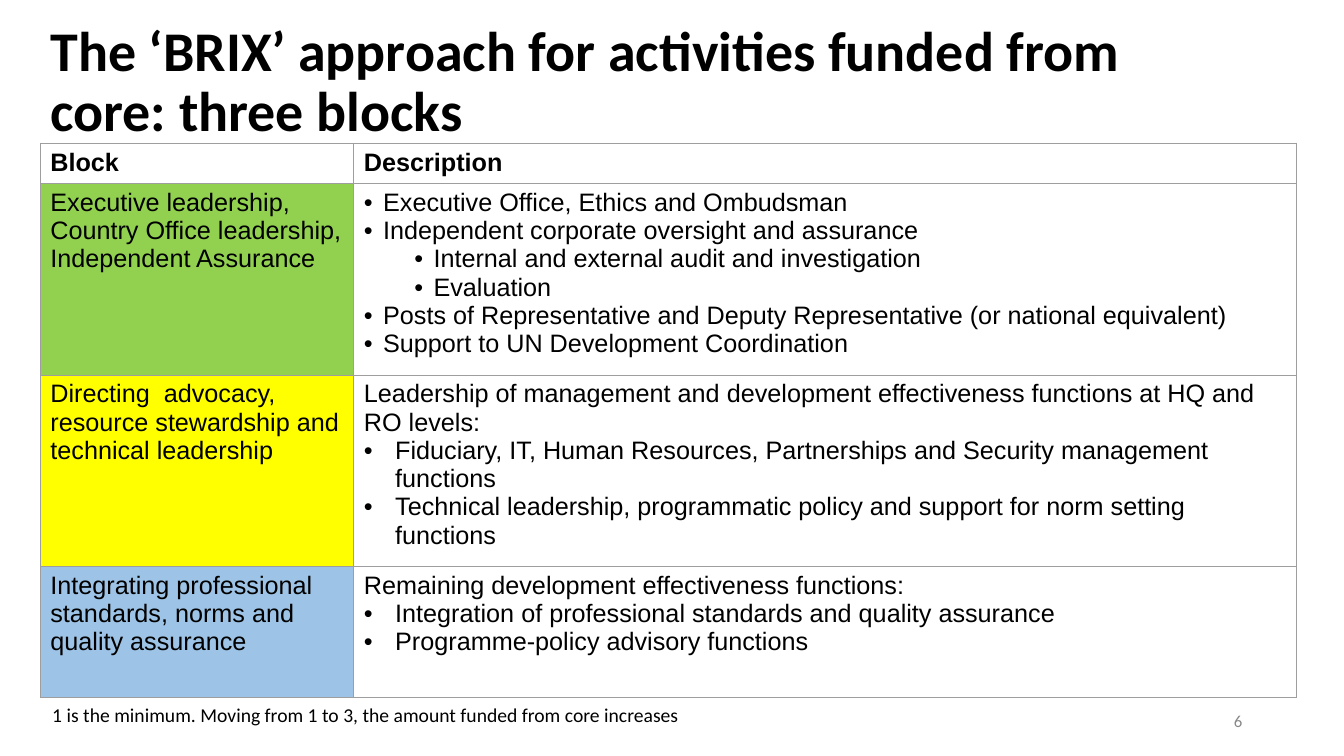
from dataclasses import dataclass

from lxml import etree
from pptx import Presentation
from pptx.dml.color import RGBColor
from pptx.enum.text import MSO_ANCHOR, MSO_AUTO_SIZE, PP_ALIGN
from pptx.oxml.ns import qn
from pptx.util import Inches, Pt

LEFT, RIGHT = PP_ALIGN.LEFT, PP_ALIGN.RIGHT
TOP, MIDDLE = MSO_ANCHOR.TOP, MSO_ANCHOR.MIDDLE
FIXED = MSO_AUTO_SIZE.NONE
TITLE_ONLY = 5


@dataclass(frozen=True)
class Theme:
    head: str = "Calibri"
    body: str = "Arial"
    ink: str = "000000"
    gray: str = "888888"
    rule: str = "9E9E9E"
    green: str = "92D050"
    yellow: str = "FFFF00"
    blue: str = "9DC3E6"
    title: int = 40
    cell: int = 18
    note: int = 14
    page: int = 12
    line: float = 0.75


THEME = Theme()
STEP = 0.5  # extra indent of each list level
TIGHT, WIDE = 0.19, 0.31  # hanging indents of bullets

COLS = (3.11, 9.35)
HEIGHTS = (0.4, 1.9, 1.9, 1.3)
# A paragraph is plain text or (text, hanging indent, level)
ROWS = (
    (None, ["Block"], ["Description"]),
    (THEME.green,
     ["Executive leadership,", "Country Office leadership,",
      "Independent Assurance"],
     [("Executive Office, Ethics and Ombudsman", TIGHT, 0),
      ("Independent corporate oversight and assurance", TIGHT, 0),
      ("Internal and external audit and investigation", TIGHT, 1),
      ("Evaluation", TIGHT, 1),
      ("Posts of Representative and Deputy Representative "
       "(or national equivalent)", TIGHT, 0),
      ("Support to UN Development Coordination", TIGHT, 0)]),
    (THEME.yellow,
     ["Directing  advocacy, resource stewardship and technical leadership"],
     ["Leadership of management and development effectiveness functions "
      "at HQ and RO levels:",
      ("Fiduciary, IT, Human Resources, Partnerships and Security "
       "management functions", WIDE, 0),
      ("Technical leadership, programmatic policy and support for norm "
       "setting functions", WIDE, 0)]),
    (THEME.blue,
     ["Integrating professional standards, norms and quality assurance"],
     ["Remaining development effectiveness functions:",
      ("Integration of professional standards and quality assurance",
       WIDE, 0),
      ("Programme-policy advisory functions", WIDE, 0)]),
)


def assign(item, values):
    for name, value in values.items():
        setattr(item, name, value)


class Deck:
    def __init__(self, theme):
        self.theme = theme
        self.file = Presentation()
        assign(self.file, {"slide_width": Inches(13.33),
                           "slide_height": Inches(7.5)})
        self.slide = self.file.slides.add_slide(
            self.file.slide_layouts[TITLE_ONLY])

    def style(self, para, text, size, font, color=None, bold=False, **form):
        """Add one formatted run to a paragraph."""
        run = para.add_run()
        run.text = text
        assign(run.font, {"size": Pt(size), "name": font, "bold": bold})
        run.font.color.rgb = RGBColor.from_string(color or self.theme.ink)
        assign(para, form)

    def title(self, text, box):
        shape = self.slide.shapes.title
        assign(shape, dict(zip(("left", "top", "width", "height"),
                               map(Inches, box))))
        frame = shape.text_frame
        assign(frame, {"word_wrap": True, "auto_size": FIXED,
                       "vertical_anchor": MIDDLE})
        assign(frame, {f"margin_{side}": Inches(0.1)
                       for side in ("left", "right", "top", "bottom")})
        self.style(frame.paragraphs[0], text, self.theme.title,
                   self.theme.head, bold=True, alignment=LEFT,
                   line_spacing=0.9)

    def text(self, text, box, size, color, anchor=TOP, wrap=True, **form):
        frame = self.slide.shapes.add_textbox(*map(Inches, box)).text_frame
        assign(frame, {"word_wrap": wrap, "vertical_anchor": anchor})
        self.style(frame.paragraphs[0], text, size, self.theme.head, color,
                   **form)

    def table(self, rows, cols, heights, left, top):
        grid = self.slide.shapes.add_table(
            len(rows), len(cols), Inches(left), Inches(top),
            Inches(sum(cols)), Inches(sum(heights))).table
        assign(grid, {"first_row": False, "horz_banding": False})
        for col, width in zip(grid.columns, cols):
            col.width = Inches(width)
        for r, (color, *texts) in enumerate(rows):
            grid.rows[r].height = Inches(heights[r])
            for c, paras in enumerate(texts):
                self.cell(grid.cell(r, c), paras, color if c == 0 else None,
                          bold=r == 0)

    def cell(self, cell, paras, color, bold):
        if color:
            cell.fill.solid()
            cell.fill.fore_color.rgb = RGBColor.from_string(color)
        else:
            cell.fill.background()
        self.border(cell)
        frame = cell.text_frame
        for i, item in enumerate(paras):
            para = frame.add_paragraph() if i else frame.paragraphs[0]
            text, hang, level = (item, 0, 0) if isinstance(item, str) else item
            self.style(para, text, self.theme.cell, self.theme.body,
                       bold=bold, level=level)
            if hang:
                self.bullet(para, hang, level)

    def border(self, cell):
        props = cell._tc.get_or_add_tcPr()
        for i, side in enumerate("LRTB"):
            line = etree.Element(qn(f"a:ln{side}"),
                                 w=str(Pt(self.theme.line)))
            fill = etree.SubElement(line, qn("a:solidFill"))
            etree.SubElement(fill, qn("a:srgbClr"), val=self.theme.rule)
            props.insert(i, line)

    def bullet(self, para, hang, level):
        props = para._p.get_or_add_pPr()
        props.set("marL", str(Inches(hang + level * STEP)))
        props.set("indent", str(-Inches(hang)))
        etree.SubElement(props, qn("a:buFont"), typeface=self.theme.body)
        etree.SubElement(props, qn("a:buChar"), char="•")


def main():
    deck = Deck(THEME)
    deck.title("The ‘BRIX’ approach for activities funded from core: "
               "three blocks", (0.4, 0.1, 11.5, 1.45))
    deck.text("1 is the minimum. Moving from 1 to 3, the amount funded "
              "from core increases", (0.42, 6.91, 8.27, 0.43),
              THEME.note, THEME.ink, wrap=False, line_spacing=1.07,
              space_after=Pt(8), alignment=LEFT)
    deck.table(ROWS, COLS, HEIGHTS, 0.4, 1.42)
    deck.text("6", (9.42, 6.95, 3, 0.4), THEME.page, THEME.gray,
              anchor=MIDDLE, alignment=RIGHT)
    deck.file.save("out.pptx")


if __name__ == "__main__":
    main()
